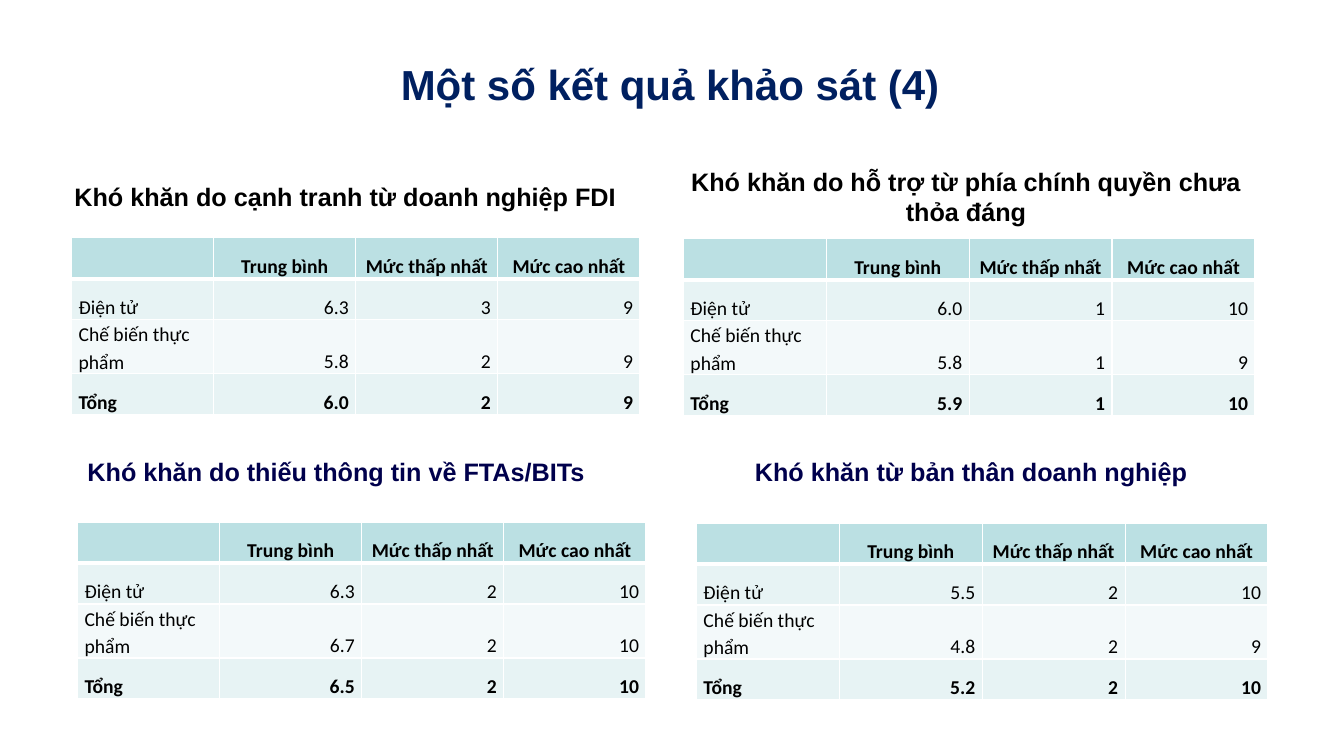
from lxml.etree import SubElement
from pptx import Presentation
from pptx.dml.color import RGBColor
from pptx.enum.text import MSO_ANCHOR as Anchor, PP_ALIGN as Align
from pptx.oxml.ns import qn
from pptx.util import Pt

COLORS = {
    "title": "002060",
    "text": "000000",
    "navy": "00004C",
    "header": "BBE0E3",
    "band": "E7F3F4",
    "light": "F3F9FA",
    "border": "FFFFFF",
}
HEADERS = ["", "Trung bình", "Mức thấp nhất", "Mức cao nhất"]
SECTORS = ["Điện tử", "Chế biến thực phẩm", "Tổng"]
ROW_FILLS = ["header", "band", "light", "band"]
ROW_HEIGHT = 29.2

HEADINGS = [
    ("Khó khăn do cạnh tranh từ doanh nghiệp FDI",
     (46.1, 119.5, 411.1, 35.3), Align.JUSTIFY, "text"),
    ("Khó khăn do hỗ trợ từ phía chính quyền chưa thỏa đáng",
     (486, 124.6, 408.2, 41), Align.CENTER, "text"),
    ("Khó khăn do thiếu thông tin về FTAs/BITs",
     (55.4, 316.1, 392.4, 35.3), Align.JUSTIFY, "navy"),
    ("Khó khăn từ bản thân doanh nghiệp",
     (497.5, 316.1, 392.4, 35.3), Align.CENTER, "navy"),
]
SURVEYS = [
    ((51.1, 169.9, 406.1),
     [("6.3", "3", "9"), ("5.8", "2", "9"), ("6.0", "2", "9")]),
    ((488.2, 170.6, 408.2),
     [("6.0", "1", "10"), ("5.8", "1", "9"), ("5.9", "1", "10")]),
    ((55.4, 373, 406.1),
     [("6.3", "2", "10"), ("6.7", "2", "10"), ("6.5", "2", "10")]),
    ((497.5, 373.7, 408.2),
     [("5.5", "2", "10"), ("4.8", "2", "9"), ("5.2", "2", "10")]),
]


def rgb(name):
    return RGBColor.from_string(COLORS[name])


def style(paragraph, face, size, color, bold, align):
    paragraph.alignment = align
    font = paragraph.font
    font.name, font.size, font.bold = face, Pt(size), bold
    font.color.rgb = rgb(color)


def add_title(slide, words):
    title = slide.shapes.title
    title.left, title.top, title.width, title.height = map(Pt, (7.9, 28.8, 941.8, 62.6))
    title.text_frame.text = words
    title.text_frame.vertical_anchor = Anchor.MIDDLE
    paragraph = title.text_frame.paragraphs[0]
    style(paragraph, "Arial", 30, "title", True, Align.CENTER)
    effects = SubElement(paragraph.runs[0].font._element, qn("a:effectLst"))
    shadow = SubElement(effects, qn("a:outerShdw"), blurRad="38100", dist="38100",
                        dir="2700000", algn="tl")
    SubElement(shadow, qn("a:srgbClr"), val=COLORS["text"])


def add_heading(slide, words, box, align, color):
    frame = slide.shapes.add_textbox(*map(Pt, box)).text_frame
    frame.word_wrap = True
    frame.vertical_anchor = Anchor.BOTTOM
    frame.text = words
    paragraph = frame.paragraphs[0]
    style(paragraph, "Arial", 18, color, True, align)
    paragraph.space_after = Pt(6)


def set_borders(cell, top, bottom):
    properties = cell._tc.get_or_add_tcPr()
    for side, width in (("L", 1), ("R", 1), ("T", top), ("B", bottom)):
        line = SubElement(properties, qn(f"a:ln{side}"), w=str(Pt(width)))
        fill = SubElement(line, qn("a:solidFill"))
        SubElement(fill, qn("a:srgbClr"), val=COLORS["border"])


def fill_cell(cell, words, row, column):
    set_borders(cell, 3 if row == 1 else 1, 3 if row == 0 else 1)
    cell.fill.solid()
    cell.fill.fore_color.rgb = rgb(ROW_FILLS[row])
    cell.vertical_anchor = Anchor.BOTTOM
    cell.margin_left = cell.margin_right = Pt(5)
    cell.margin_top = cell.margin_bottom = 0
    cell.text = words
    if row == 0:
        align = Align.CENTER
    else:
        align = Align.RIGHT if column else Align.LEFT
    paragraph = cell.text_frame.paragraphs[0]
    style(paragraph, "Calibri", 14, "text", row in (0, len(SECTORS)), align)
    paragraph.line_spacing = 1.15
    paragraph.space_after = Pt(3)


def add_survey(slide, place, scores):
    left, top, width = place
    rows = [HEADERS] + [[sector, *values] for sector, values in zip(SECTORS, scores)]
    table = slide.shapes.add_table(len(rows), len(HEADERS), Pt(left), Pt(top), Pt(width),
                                   Pt(ROW_HEIGHT * len(rows))).table
    for column in table.columns:
        column.width = Pt(width / len(HEADERS))
    for r, row in enumerate(rows):
        table.rows[r].height = Pt(ROW_HEIGHT)
        for c, words in enumerate(row):
            fill_cell(table.cell(r, c), words, r, c)


def main():
    deck = Presentation()
    deck.slide_width, deck.slide_height = Pt(960), Pt(540)
    slide = deck.slides.add_slide(deck.slide_layouts[5])
    add_title(slide, "Một số kết quả khảo sát (4)")
    for heading, survey in zip(HEADINGS, SURVEYS):
        add_heading(slide, *heading)
        add_survey(slide, *survey)
    deck.save("out.pptx")


if __name__ == "__main__":
    main()
